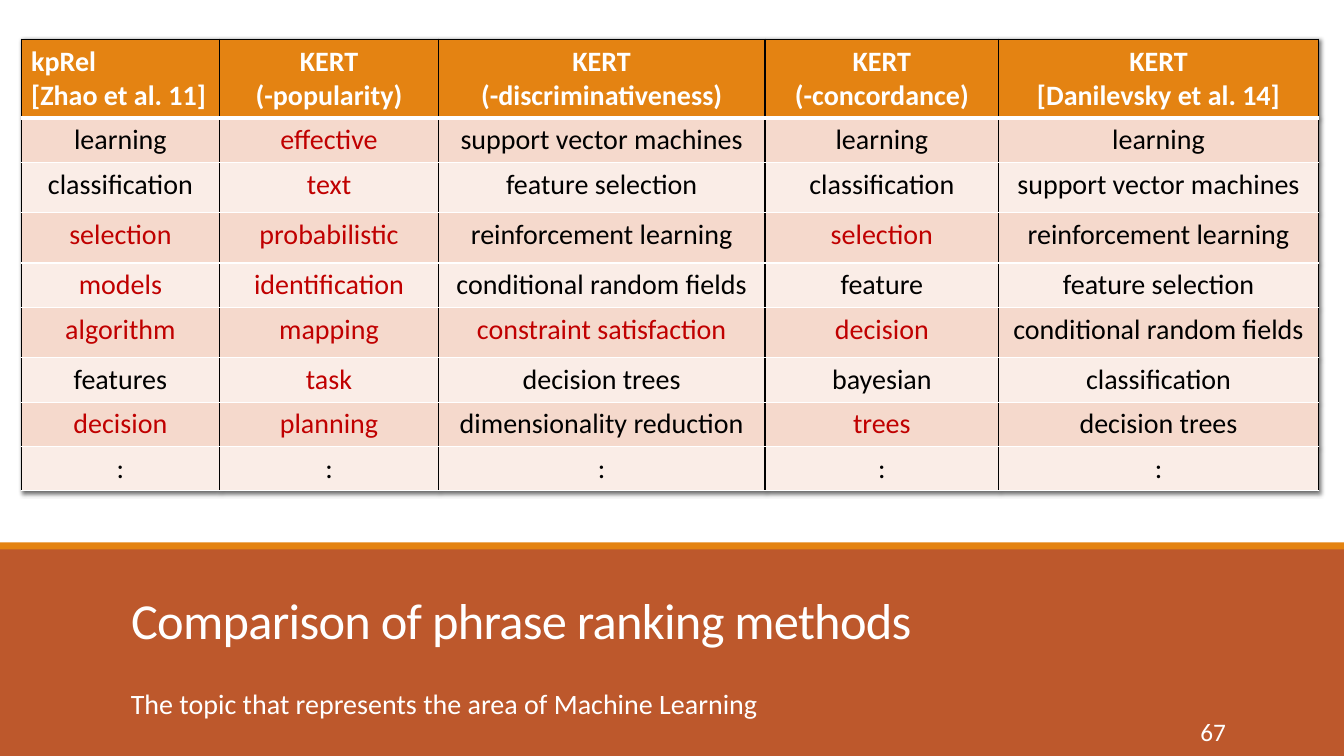
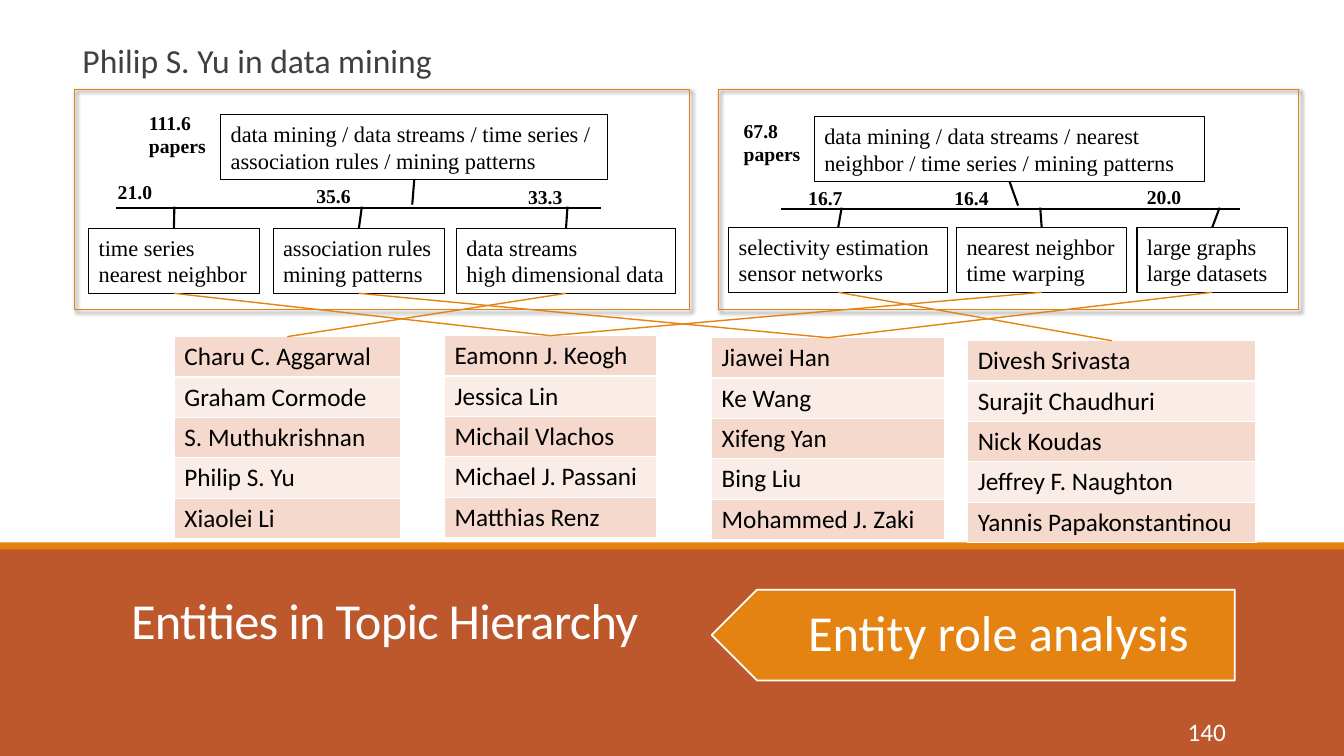
from dataclasses import dataclass

from lxml import etree
from pptx import Presentation
from pptx.dml.color import RGBColor
from pptx.enum.shapes import MSO_CONNECTOR, MSO_SHAPE
from pptx.enum.text import MSO_ANCHOR, MSO_AUTO_SIZE, PP_ALIGN
from pptx.oxml import parse_xml
from pptx.oxml.ns import nsdecls, qn
from pptx.util import Emu, Pt

PX = 9144  # 100 px to the inch
RECT, ARROW = MSO_SHAPE.RECTANGLE, MSO_SHAPE.PENTAGON
STRAIGHT = MSO_CONNECTOR.STRAIGHT
TOP, MIDDLE, BOTTOM = MSO_ANCHOR.TOP, MSO_ANCHOR.MIDDLE, MSO_ANCHOR.BOTTOM
LEFT, CENTER, RIGHT = PP_ALIGN.LEFT, PP_ALIGN.CENTER, PP_ALIGN.RIGHT
CONNECT_TOP, CONNECT_BOTTOM = 0, 2
TITLE_ONLY = 5


@dataclass(frozen=True)
class Theme:
    rust: str = "BD582C"
    orange: str = "E48312"
    bands: tuple = ("F5D9CC", "FAEDE7")
    white: str = "FFFFFF"
    black: str = "000000"
    grey: str = "404040"
    red: str = "C00000"
    sans: str = "Calibri"
    serif: str = "Times New Roman"
    title: int = 36
    heading: int = 24
    body: int = 20
    small: int = 18
    node: int = 16
    label: int = 14

    def font(self, size, color, name=None, bold=False):
        return {"name": name or self.sans, "size": Pt(size), "bold": bold, "color": color}


T = Theme()
NODE = T.font(T.node, T.black, T.serif)
LABEL = T.font(T.label, T.black, T.serif, True)
TITLE = T.font(T.title, T.white)

# Slide 1 content
RANKING_COLS = (197, 217, 324, 232, 317)
RANKING_ROWS = (78, 44, 50, 50, 44, 50, 44, 44, 44)
RANKING = (
    ("kpRel\n[Zhao et al. 11]", "KERT\n(-popularity)", "KERT\n(-discriminativeness)",
     "KERT\n(-concordance)", "KERT\n[Danilevsky et al. 14]"),
    ("learning", "effective", "support vector machines", "learning", "learning"),
    ("classification", "text", "feature selection", "classification", "support vector machines"),
    ("selection", "probabilistic", "reinforcement learning", "selection", "reinforcement learning"),
    ("models", "identification", "conditional random fields", "feature", "feature selection"),
    ("algorithm", "mapping", "constraint satisfaction", "decision", "conditional random fields"),
    ("features", "task", "decision trees", "bayesian", "classification"),
    ("decision", "planning", "dimensionality reduction", "trees", "decision trees"),
    (":",) * 5,
)
WEAK_PHRASES = {
    "selection", "models", "algorithm", "decision", "trees", "constraint satisfaction",
    "effective", "text", "probabilistic", "identification", "mapping", "task", "planning",
}

# Slide 2 content; positions are relative to each panel
# leaf: text, left, width, stem x, weight, weight position
TREES = (
    {"box": (74, 89, 610, 218),
     "root": ("data mining / data streams / time series / association rules / mining patterns",
              (145, 25, 384, 64)),
     "papers": ("111.6\npapers", (64, 16, 97, 57)),
     "bar": (41, 522, 117), "root_stem": 335, "leaf_top": 138,
     "leaves": (("time series\nnearest neighbor", 14, 169, 99, "21.0", (33, 85)),
                ("association rules\nmining patterns", 197, 170, 285, "35.6", (230, 89)),
                ("data streams\nhigh dimensional data", 379, 217, 489, "33.3", (440, 90)))},
    {"box": (713, 89, 575, 218),
     "root": ("data mining / data streams / nearest neighbor / time series / mining patterns",
              (95, 27, 387, 64)),
     "papers": ("67.8\npapers", (15, 24, 80, 57)),
     "bar": (62, 517, 118), "root_stem": 297, "leaf_top": 137,
     "leaves": (("selectivity estimation\nsensor networks", 10, 217, 122, "16.7", (79, 91)),
                ("nearest neighbor\ntime warping", 236, 169, 319, "16.4", (224, 91)),
                ("large graphs\nlarge datasets", 415, 149, 497, "20.0", (415, 90)))},
)
# community: left, top, width, members
COMMUNITIES = (
    (173, 334, 224, ("Charu C. Aggarwal", "Graham Cormode", "S. Muthukrishnan",
                     "Philip S. Yu", "Xiaolei Li")),
    (441, 333, 210, ("Eamonn J. Keogh", "Jessica Lin", "Michail Vlachos",
                     "Michael J. Passani", "Matthias Renz")),
    (706, 335, 231, ("Jiawei Han", "Ke Wang", "Xifeng Yan", "Bing Liu", "Mohammed J. Zaki")),
    (960, 338, 286, ("Divesh Srivasta", "Surajit Chaudhuri", "Nick Koudas",
                     "Jeffrey F. Naughton", "Yannis Papakonstantinou")),
)
LEAF_COMMUNITY = (1, 2, 0, 3, 1, 2)


def px(*values):
    return [Emu(round(v * PX)) for v in values]


def rgb(color):
    return RGBColor.from_string(color)


def set_all(target, values):
    for name, value in values.items():
        setattr(target, name, value)


def write(tf, text, font, para=None, frame=None):
    """Fill a text frame, one paragraph per line."""
    set_all(tf, {"word_wrap": True, **(frame or {})})
    tf.text = text
    for p in tf.paragraphs:
        set_all(p, {"alignment": LEFT, **(para or {})})
        for r in p.runs:
            set_all(r.font, {k: v for k, v in font.items() if k != "color"})
            r.font.color.rgb = rgb(font["color"])


def add_text(shapes, box, text, font, para=None, frame=None):
    sp = shapes.add_textbox(*px(*box))
    write(sp.text_frame, text, font, para, frame)
    return sp


def add_box(shapes, box, fill=None, line=None, width=1, kind=RECT):
    sp = shapes.add_shape(kind, *px(*box))
    sp.shadow.inherit = False
    if fill:
        sp.fill.solid()
        sp.fill.fore_color.rgb = rgb(fill)
    else:
        sp.fill.background()
    if line:
        sp.line.color.rgb = rgb(line)
        sp.line.width = Pt(width)
    else:
        sp.line.fill.background()
    return sp


def add_line(shapes, start, end, color, width):
    cn = shapes.add_connector(STRAIGHT, *px(*start, *end))
    cn.line.color.rgb = rgb(color)
    cn.line.width = Pt(width)
    etree.SubElement(cn._element.spPr, qn("a:effectLst"))
    return cn


def drop_shadow():
    return parse_xml(
        f'<a:outerShdw {nsdecls("a")} blurRad="38100" dist="25400" dir="2700000" algn="tl" '
        f'rotWithShape="0"><a:srgbClr val="{T.black}"><a:alpha val="60000"/></a:srgbClr>'
        '</a:outerShdw>')


def format_cell(cell, text, fill, edges, font, para=None, anchor=TOP):
    tc_pr = cell._tc.get_or_add_tcPr()
    for side in "LRTB":
        color, width = edges[side]
        tc_pr.append(parse_xml(
            f'<a:ln{side} {nsdecls("a")} w="{Pt(width)}"><a:solidFill>'
            f'<a:srgbClr val="{color}"/></a:solidFill></a:ln{side}>'))
    cell.fill.solid()
    cell.fill.fore_color.rgb = rgb(fill)
    cell.vertical_anchor = anchor
    write(cell.text_frame, text, font, para)


def add_grid(shapes, left, top, cols, rows):
    frame = shapes.add_table(len(rows), len(cols), *px(left, top, sum(cols), sum(rows)))
    table = frame.table
    set_all(table, {"first_row": False, "horz_banding": False})
    for col, width in zip(table.columns, px(*cols)):
        col.width = width
    for row, height in zip(table.rows, px(*rows)):
        row.height = height
    return table


def style_layout(layout, slide):
    """Move the shared bands from a slide to its layout."""
    bands = (((0, 542, 1333.33, 208), T.rust), ((0, 538, 1333.33, 7), T.orange))
    for i, (box, fill) in enumerate(bands):
        sp = add_box(slide.shapes, box, fill)
        layout.shapes.element.insert(2 + i, sp._element)


def add_header(slide, title, number):
    """Title and slide number on the lower band."""
    sp = slide.shapes.title
    set_all(sp, dict(zip(("left", "top", "width", "height"), px(120, 555, 1106, 90))))
    side, = px(10)
    write(sp.text_frame, title, TITLE, {"line_spacing": 0.85},
          {"vertical_anchor": BOTTOM, "auto_size": MSO_AUTO_SIZE.NONE, "margin_left": side,
           "margin_right": side, "margin_top": 0, "margin_bottom": 0})
    sp.text_frame.paragraphs[0].runs[0].font._element.set("spc", "-50")
    add_text(slide.shapes, (1083, 706, 143, 40), number, T.font(T.small, T.white),
             {"alignment": RIGHT}, {"vertical_anchor": MIDDLE})


def add_ranking(shapes, left, top):
    table = add_grid(shapes, left, top, RANKING_COLS, RANKING_ROWS)
    effects = etree.Element(qn("a:effectLst"))
    effects.append(drop_shadow())
    table._tbl.tblPr.insert(0, effects)
    black, white, thick = (T.black, 1), (T.white, 1), (T.white, 3)
    for i, row in enumerate(RANKING):
        head = i == 0
        edges = {"L": black, "R": black, "T": black if head else thick if i == 1 else white,
                 "B": thick if head else white}
        for j, text in enumerate(row):
            color = T.white if head else T.red if text in WEAK_PHRASES else T.black
            format_cell(table.cell(i, j), text, T.orange if head else T.bands[(i - 1) % 2],
                        edges, T.font(T.body, color, bold=head),
                        {"alignment": LEFT if head and j == 0 else CENTER})


def add_tree(shapes, tree):
    """Topic tree in a framed panel; returns its leaf boxes."""
    x, y, w, h = tree["box"]

    def inside(box):
        return (x + box[0], y + box[1], *box[2:])

    def node(box, text):
        sp = add_box(shapes, inside(box), line=T.black, width=0.75)
        write(sp.text_frame, text, NODE, frame={"vertical_anchor": TOP})
        return sp

    panel = add_box(shapes, (x, y, w, h), line=T.orange)
    panel._element.spPr.find(qn("a:effectLst")).append(drop_shadow())
    text, box = tree["root"]
    root = node(box, text)
    bar_left, bar_right, bar_y = tree["bar"]
    add_line(shapes, inside((bar_left, bar_y)), inside((bar_right, bar_y)), T.black, 1.5)
    stem_end = inside((tree["root_stem"], bar_y - 3))
    add_line(shapes, stem_end, stem_end, T.black, 1.5).end_connect(root, CONNECT_BOTTOM)
    text, box = tree["papers"]
    add_text(shapes, inside(box), text, LABEL)
    leaves = []
    for text, left, width, stem_x, weight, spot in tree["leaves"]:
        leaf = node((left, tree["leaf_top"], width, 64), text)
        start = inside((stem_x, bar_y - 1))
        add_line(shapes, start, start, T.black, 1.5).end_connect(leaf, CONNECT_TOP)
        add_text(shapes, inside((*spot, 60, 34)), weight, LABEL)
        leaves.append(leaf)
    return leaves


def add_community(shapes, left, top, width, members):
    table = add_grid(shapes, left, top, (width,), (40,) * len(members))
    edges = dict.fromkeys("LRTB", (T.white, 1))
    for i, name in enumerate(members):
        format_cell(table.cell(i, 0), name, T.bands[i % 2], edges,
                    T.font(T.small, T.black), anchor=MIDDLE)


def add_callout(shapes, box, text):
    """Arrow pointing left with its caption."""
    x, y, w, h = box
    group = shapes.add_group_shape()
    add_box(group.shapes, box, T.orange, T.white, 1.25, ARROW).rotation = 180
    margins = zip(("margin_left", "margin_top", "margin_right", "margin_bottom"),
                  px(51, 15, 28, 15))
    add_text(group.shapes, (x + 27, y, w - 27, h), text, TITLE,
             {"alignment": CENTER, "line_spacing": 0.9},
             {"vertical_anchor": MIDDLE, **dict(margins)})


def ranking_slide(slide):
    add_header(slide, "Comparison of phrase ranking methods", "67")
    add_text(slide.shapes, (120, 685, 960, 32),
             "The topic that represents the area of Machine Learning",
             T.font(T.body, T.white), {"line_spacing": 0.9},
             {"margin_top": 0, "margin_bottom": 0})
    add_ranking(slide.shapes, 21, 39)


def entities_slide(slide):
    shapes = slide.shapes
    add_header(slide, "Entities in Topic Hierarchy", "140")
    add_text(shapes, (72, 35, 370, 50), "Philip S. Yu in data mining",
             T.font(T.heading, T.grey), frame={"word_wrap": False})
    leaves = [leaf for tree in TREES for leaf in add_tree(shapes, tree)]
    for community in COMMUNITIES:
        add_community(shapes, *community)
    # Links from each leaf to its community
    for leaf, index in zip(leaves, LEAF_COMMUNITY):
        left, top, width, _ = COMMUNITIES[index]
        end = (left + width / 2, top)
        add_line(shapes, end, end, T.orange, 1).begin_connect(leaf, CONNECT_BOTTOM)
    add_callout(shapes, (706, 585, 519, 90), "Entity role analysis")


def main():
    prs = Presentation()
    prs.slide_width, prs.slide_height = px(1333.33, 750)
    layout = prs.slide_layouts[TITLE_ONLY]
    slides = [prs.slides.add_slide(layout) for _ in range(2)]
    style_layout(layout, slides[0])
    for build, slide in zip((ranking_slide, entities_slide), slides):
        build(slide)
    prs.save("out.pptx")


if __name__ == "__main__":
    main()
